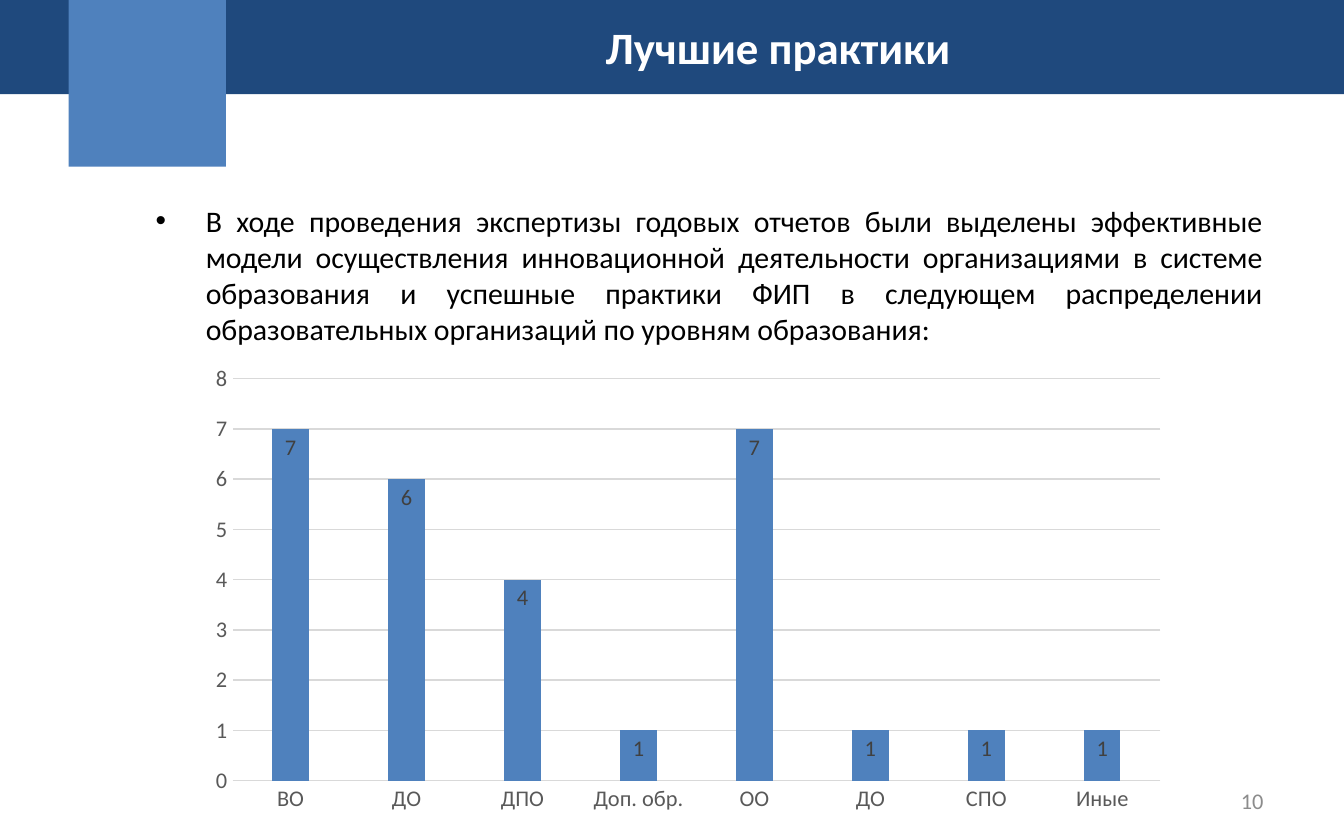
from pptx import Presentation
from pptx import util as u
from pptx.chart.data import CategoryChartData
from pptx.dml.color import RGBColor
from pptx.enum import chart as ch, shapes, text
from pptx.oxml import parse_xml
from pptx.oxml.ns import nsdecls

COLORS = {
    "navy": "1F497D", "blue": "4F81BD", "white": "FFFFFF", "black": "000000",
    "page": "8C8C8C", "axis": "595959", "grid": "D9D9D9", "label": "404040",
}


def rgb(name):
    return RGBColor.from_string(COLORS[name])


def format_font(font, size=12, color="black", bold=False):
    font.name, font.size, font.bold = "Calibri", u.Pt(size), bold
    font.color.rgb = rgb(color)


def write(tf, content, align=text.PP_ALIGN.LEFT, bullet=None, indent=0, **style):
    p = tf.paragraphs[0]
    p.alignment = align
    if bullet:
        pPr = p._p.get_or_add_pPr()
        pPr.set("marL", str(u.Cm(indent)))
        pPr.set("indent", str(-u.Cm(indent)))
        ns = nsdecls("a")
        pPr.append(parse_xml(f'<a:buFont {ns} typeface="Arial"/>'))
        pPr.append(parse_xml(f'<a:buChar {ns} char="{bullet}"/>'))
    r = p.add_run()
    r.text = content
    format_font(r.font, **style)


class Deck:
    """Adds styled elements to the current slide."""

    def __init__(self, prs):
        self.s = prs.slides.add_slide(prs.slide_layouts[6])

    def block(self, x, y, w, h, color):
        sp = self.s.shapes.add_shape(
            shapes.MSO_SHAPE.RECTANGLE, u.Cm(x), u.Cm(y), u.Cm(w), u.Cm(h))
        sp.shadow.inherit = False
        sp.fill.solid()
        sp.fill.fore_color.rgb = rgb(color)
        sp.line.fill.background()

    def text(self, x, y, w, h, content, anchor=text.MSO_ANCHOR.TOP, **style):
        sp = self.s.shapes.add_textbox(u.Cm(x), u.Cm(y), u.Cm(w), u.Cm(h))
        tf = sp.text_frame
        tf.word_wrap = True
        tf.vertical_anchor = anchor
        write(tf, content, **style)

    def columns(self, x, y, w, h, cats, vals):
        data = CategoryChartData(number_format="General")
        data.categories = cats
        data.add_series("Series 1", vals)
        chart = self.s.shapes.add_chart(
            ch.XL_CHART_TYPE.COLUMN_CLUSTERED,
            u.Cm(x), u.Cm(y), u.Cm(w), u.Cm(h), data).chart
        chart.has_legend = chart.has_title = False
        format_font(chart.font, 10)
        for axis in (chart.category_axis, chart.value_axis):
            axis.major_tick_mark = axis.minor_tick_mark = ch.XL_TICK_MARK.NONE
            format_font(axis.tick_labels.font, color="axis")
        value = chart.value_axis
        value.minimum_scale, value.maximum_scale, value.major_unit = 0, 8, 1
        value.format.line.fill.background()
        for line in (chart.category_axis.format.line, value.major_gridlines.format.line):
            line.color.rgb = rgb("grid")
            line.width = u.Pt(0.75)
        plot = chart.plots[0]
        plot.gap_width, plot.overlap, plot.vary_by_categories = 219, -27, False
        bars = plot.series[0]
        bars.format.fill.solid()
        bars.format.fill.fore_color.rgb = rgb("blue")
        labels = bars.data_labels
        labels.show_value = True
        labels.position = ch.XL_LABEL_POSITION.INSIDE_END
        format_font(labels.font, color="label")


def main():
    prs = Presentation()
    prs.slide_width, prs.slide_height = u.Cm(25.4), u.Cm(15.88)
    deck = Deck(prs)
    deck.block(0, 0, 25.4, 1.78, "navy")
    deck.block(1.3, 0, 2.97, 3.15, "blue")
    deck.text(
        2.69, 3.71, 21.44, 3.43,
        "В ходе проведения экспертизы годовых отчетов были выделены эффективные "
        "модели осуществления инновационной деятельности организациями в системе "
        "образования и успешные практики ФИП в следующем распределении "
        "образовательных организаций по уровням образования:",
        align=text.PP_ALIGN.JUSTIFY, bullet="•", indent=0.95, size=16)
    deck.text(18.21, 14.71, 5.92, 0.84, "10", anchor=text.MSO_ANCHOR.MIDDLE,
              align=text.PP_ALIGN.RIGHT, color="page")
    deck.text(3.3, 0.25, 22.81, 1.27, "Лучшие практики",
              align=text.PP_ALIGN.CENTER, size=24, color="white", bold=True)
    deck.columns(
        3.71, 6.73, 18.59, 8.81,
        ["ВО", "ДО", "ДПО", "Доп. обр.", "ОО", "ДО", "СПО", "Иные"],
        [7, 6, 4, 1, 7, 1, 1, 1])
    prs.save("out.pptx")


if __name__ == "__main__":
    main()
